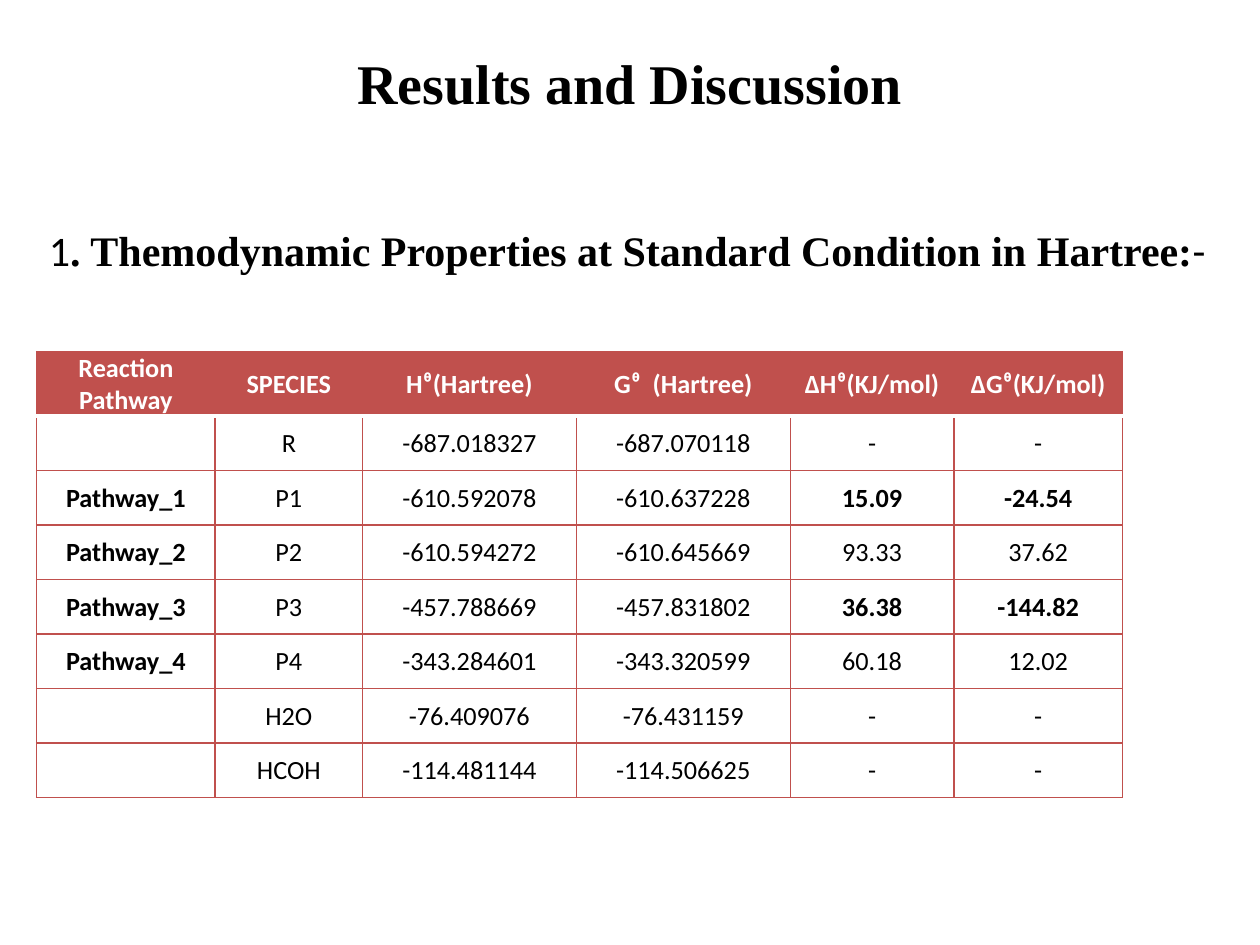
from dataclasses import dataclass

from lxml.etree import SubElement
from pptx import Presentation
from pptx.dml.color import RGBColor
from pptx.enum.text import MSO_ANCHOR, MSO_AUTO_SIZE, PP_ALIGN
from pptx.oxml.ns import qn
from pptx.util import Inches, Pt


@dataclass(frozen=True)
class Theme:
    ink: str = "000000"
    paper: str = "FFFFFF"
    accent: str = "C0504D"
    serif: str = "Times New Roman"
    sans: str = "Calibri"
    title: int = 32
    heading: int = 24
    body: int = 15
    thin: float = 1
    thick: float = 2.25


THEME = Theme()
HEADER = ["Reaction Pathway", "SPECIES", "Hᶿ(Hartree)", "Gᶿ  (Hartree)",
          "∆Hᶿ(KJ/mol)", "∆Gᶿ(KJ/mol)"]
SPECIES = [
    ["", "R", "-687.018327", "-687.070118", "-", "-"],
    ["Pathway_1", "P1", "-610.592078", "-610.637228", "15.09", "-24.54"],
    ["Pathway_2", "P2", "-610.594272", "-610.645669", "93.33", "37.62"],
    ["Pathway_3", "P3", "-457.788669", "-457.831802", "36.38", "-144.82"],
    ["Pathway_4", "P4", "-343.284601", "-343.320599", "60.18", "12.02"],
    ["", "H2O", "-76.409076", "-76.431159", "-", "-"],
    ["", "HCOH", "-114.481144", "-114.506625", "-", "-"],
]
BOLD_RESULTS = {"15.09", "-24.54", "36.38", "-144.82"}
COLUMN_WEIGHTS = [142, 117, 170, 170, 130, 134]
ROW_WEIGHTS = [51] + [43.3] * len(SPECIES)


def area(prs, left, top, width, height):
    w, h = prs.slide_width / 100, prs.slide_height / 100
    return int(left * w), int(top * h), int(width * w), int(height * h)


def style_font(font, name, size, color, bold):
    font.name = name
    font.size = Pt(size)
    font.bold = bold
    font.color.rgb = RGBColor.from_string(color)


def add_text(s, box, runs, size, wrap=True):
    tf = s.shapes.add_textbox(*box).text_frame
    tf.word_wrap = wrap
    tf.auto_size = MSO_AUTO_SIZE.NONE if wrap else MSO_AUTO_SIZE.SHAPE_TO_FIT_TEXT
    p = tf.paragraphs[0]
    for text, name, bold in runs:
        r = p.add_run()
        r.text = text
        style_font(r.font, name, size, THEME.ink, bold)
    return p


def add_border(cell, side, color, width):
    ln = SubElement(cell._tc.get_or_add_tcPr(), qn(f"a:ln{side}"), w=str(Pt(width)))
    fill = SubElement(ln, qn("a:solidFill"))
    SubElement(fill, qn("a:srgbClr"), val=color)


def format_cell(cell, text, row, col):
    header = row == 0
    cell.margin_left = cell.margin_right = cell.margin_top = Inches(0.01)
    cell.margin_bottom = 0
    cell.vertical_anchor = MSO_ANCHOR.MIDDLE
    for side in "LRTB":
        divider = (side, row) in {("B", 0), ("T", 1)}
        add_border(cell, side, THEME.paper if divider else THEME.accent,
                   THEME.thick if divider else THEME.thin)
    cell.fill.solid()
    cell.fill.fore_color.rgb = RGBColor.from_string(
        THEME.accent if header else THEME.paper)
    if text:
        p = cell.text_frame.paragraphs[0]
        p.text = text
        p.alignment = PP_ALIGN.CENTER
        style_font(p.runs[0].font, THEME.sans, THEME.body,
                   THEME.paper if header else THEME.ink,
                   header or col == 0 or text in BOLD_RESULTS)


def add_species_table(s, box):
    rows = [HEADER] + SPECIES
    table = s.shapes.add_table(len(rows), len(HEADER), *box).table
    table.horz_banding = False
    for column, weight in zip(table.columns, COLUMN_WEIGHTS):
        column.width = int(box[2] * weight / sum(COLUMN_WEIGHTS))
    for row, weight in zip(table.rows, ROW_WEIGHTS):
        row.height = int(box[3] * weight / sum(ROW_WEIGHTS))
    for i, values in enumerate(rows):
        for j, text in enumerate(values):
            format_cell(table.cell(i, j), text, i, j)


def main():
    prs = Presentation()
    prs.slide_width, prs.slide_height = Inches(10), Inches(7.5)
    s = prs.slides.add_slide(prs.slide_layouts[6])

    title = add_text(s, area(prs, 6.9, 5.3, 86.2, 10.3),
                     [("Results and Discussion", THEME.serif, True)], THEME.title)
    title.alignment = PP_ALIGN.CENTER
    title.line_spacing = 0.9

    add_text(s, area(prs, 2.9, 23.1, 93.8, 6.7), [
        ("1", THEME.sans, False),
        (". Themodynamic Properties at Standard Condition in Hartree:", THEME.serif, True),
        ("-", THEME.sans, False),
    ], THEME.heading, wrap=False)

    add_species_table(s, area(prs, 2.9, 37.2, 86.2, 47.2))
    prs.save("out.pptx")


if __name__ == "__main__":
    main()
